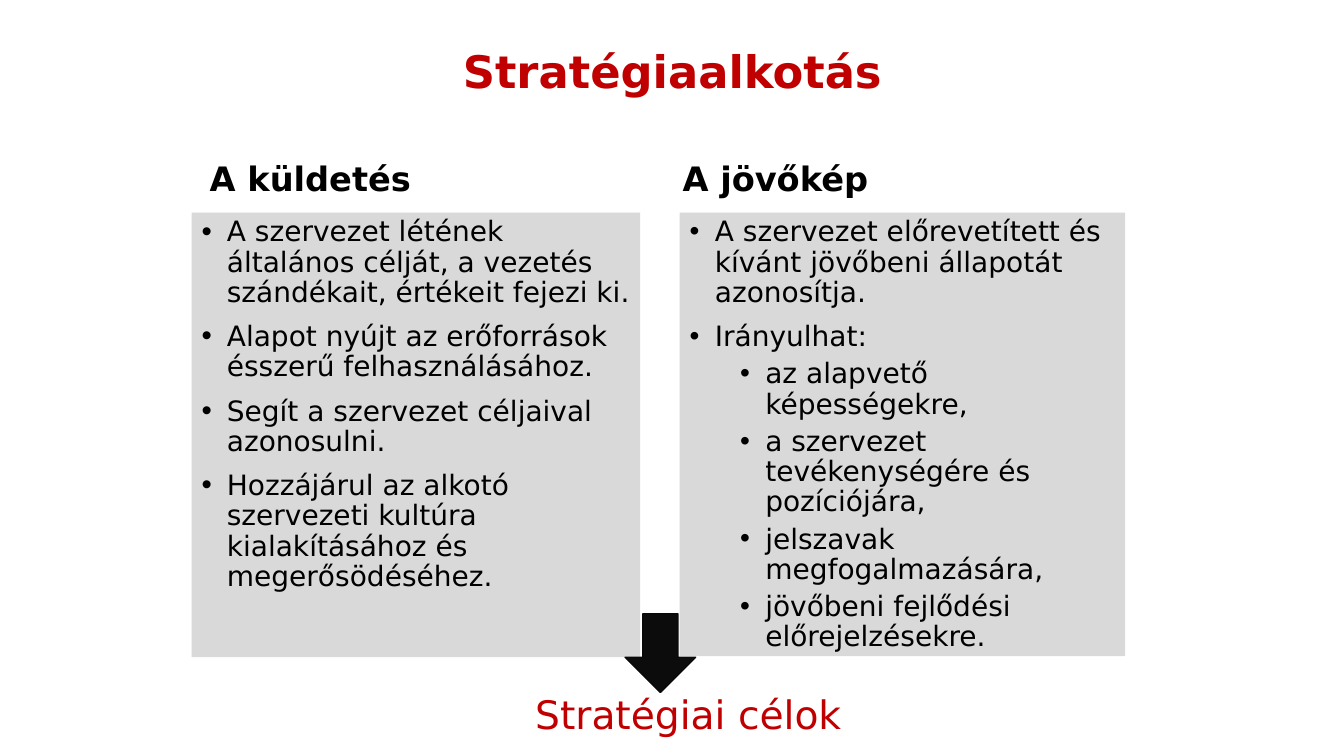
from dataclasses import dataclass

import pptx
import pptx.dml.color
import pptx.enum.shapes
import pptx.enum.text
import pptx.oxml.ns
import pptx.util
from lxml import etree

EMU_PER_PX = 9144  # 100 px to the inch
FONT = "DejaVu Sans"
RED, BLACK, GREY = "C00000", "000000", "D9D9D9"
ARROW_FILL, ARROW_LINE = "0C0C0C", "090909"
ALIGN = pptx.enum.text.PP_ALIGN
ANCHOR = pptx.enum.text.MSO_ANCHOR


@dataclass
class Box:
    left: int
    top: int
    width: int
    height: int

    def emu(self) -> list[int]:
        return [px(n) for n in (self.left, self.top, self.width, self.height)]


@dataclass
class Item:
    text: str
    level: int = 0


@dataclass
class Column:
    heading_index: int
    heading: str
    heading_box: Box
    list_box: Box
    bullet_percent: int
    items: list[Item]


COLUMNS = [
    Column(1, "A küldetés", Box(198, 156, 406, 58), Box(190, 211, 445, 441), 105, [
        Item("A szervezet létének általános célját, a vezetés szándékait, értékeit fejezi ki."),
        Item("Alapot nyújt az erőforrások ésszerű felhasználásához."),
        Item("Segít a szervezet céljaival azonosulni."),
        Item("Hozzájárul az alkotó szervezeti kultúra kialakításához és megerősödéséhez."),
    ]),
    Column(3, "A jövőkép", Box(667, 156, 441, 58), Box(674, 211, 442, 440), 100, [
        Item("A szervezet előrevetített és kívánt jövőbeni állapotát azonosítja."),
        Item("Irányulhat:"),
        Item("az alapvető képességekre,", 1),
        Item("a szervezet tevékenységére és pozíciójára,", 1),
        Item("jelszavak megfogalmazására,", 1),
        Item("jövőbeni fejlődési előrejelzésekre.", 1),
    ]),
]


def px(length: int) -> int:
    return pptx.util.Emu(length * EMU_PER_PX)


def color(value: str) -> pptx.dml.color.RGBColor:
    return pptx.dml.color.RGBColor.from_string(value)


def place(shape, box: Box, anchor=ANCHOR.TOP) -> None:
    shape.left, shape.top, shape.width, shape.height = box.emu()
    frame = shape.text_frame
    frame.word_wrap = True
    frame.auto_size = pptx.enum.text.MSO_AUTO_SIZE.NONE
    frame.vertical_anchor = anchor


def style(paragraph, size: int, text_color: str, bold: bool = False,
          align=ALIGN.LEFT, spacing: float = 0.9) -> None:
    paragraph.alignment = align
    paragraph.line_spacing = spacing
    font = paragraph.font
    font.name, font.size, font.bold = FONT, pptx.util.Pt(size), bold
    font.color.rgb = color(text_color)


def add_bullet(paragraph, level: int, percent: int) -> None:
    properties = paragraph._p.get_or_add_pPr()
    properties.set("marL", str(px(25 + 50 * level)))
    properties.set("indent", str(px(-25)))
    for tag, name, value in (("a:buSzPct", "val", str(percent * 1000)),
                             ("a:buFont", "typeface", "Arial"),
                             ("a:buChar", "char", "•")):
        etree.SubElement(properties, pptx.oxml.ns.qn(tag)).set(name, value)


def fill_list(shape, column: Column) -> None:
    place(shape, column.list_box)
    shape.fill.solid()
    shape.fill.fore_color.rgb = color(GREY)
    frame = shape.text_frame
    for number, item in enumerate(column.items):
        paragraph = frame.add_paragraph() if number else frame.paragraphs[0]
        paragraph.text = item.text
        paragraph.level = item.level
        add_bullet(paragraph, item.level, column.bullet_percent)
        before = (5 if item.level else 10) if number else 0
        paragraph.space_before = pptx.util.Pt(before)
        style(paragraph, 20, BLACK)


def fill_line(shape, text: str, box: Box, size: int, text_color: str, bold: bool,
              align=ALIGN.LEFT, anchor=ANCHOR.TOP, spacing: float = 0.9) -> None:
    place(shape, box, anchor)
    paragraph = shape.text_frame.paragraphs[0]
    paragraph.text = text
    paragraph.space_before = pptx.util.Pt(0)
    style(paragraph, size, text_color, bold, align, spacing)


def add_arrow(slide, box: Box) -> None:
    arrow = slide.shapes.add_shape(
        pptx.enum.shapes.MSO_SHAPE.DOWN_ARROW, *box.emu())
    arrow.shadow.inherit = False
    arrow.fill.solid()
    arrow.fill.fore_color.rgb = color(ARROW_FILL)
    arrow.line.color.rgb = color(ARROW_LINE)
    arrow.line.width = pptx.util.Pt(1)


def main() -> None:
    presentation = pptx.Presentation()
    presentation.slide_width, presentation.slide_height = px(1333), px(750)
    comparison_layout = presentation.slide_layouts[4]
    slide = presentation.slides.add_slide(comparison_layout)
    placeholders = slide.placeholders

    # Title
    fill_line(slide.shapes.title, "Stratégiaalkotás", Box(167, 3, 1000, 140),
              32, RED, True, ALIGN.CENTER, ANCHOR.MIDDLE)

    # Mission and vision columns
    for column in COLUMNS:
        fill_line(placeholders[column.heading_index], column.heading,
                  column.heading_box, 24, BLACK, True)
        fill_list(placeholders[column.heading_index + 1], column)

    # Arrow to the resulting goals
    add_arrow(slide, Box(620, 609, 70, 78))
    goals_box = Box(495, 680, 375, 57)
    goals = slide.shapes.add_textbox(*goals_box.emu())
    fill_line(goals, "Stratégiai célok", goals_box, 28, RED, False,
              ALIGN.CENTER, spacing=1.0)

    presentation.save("out.pptx")


if __name__ == "__main__":
    main()
